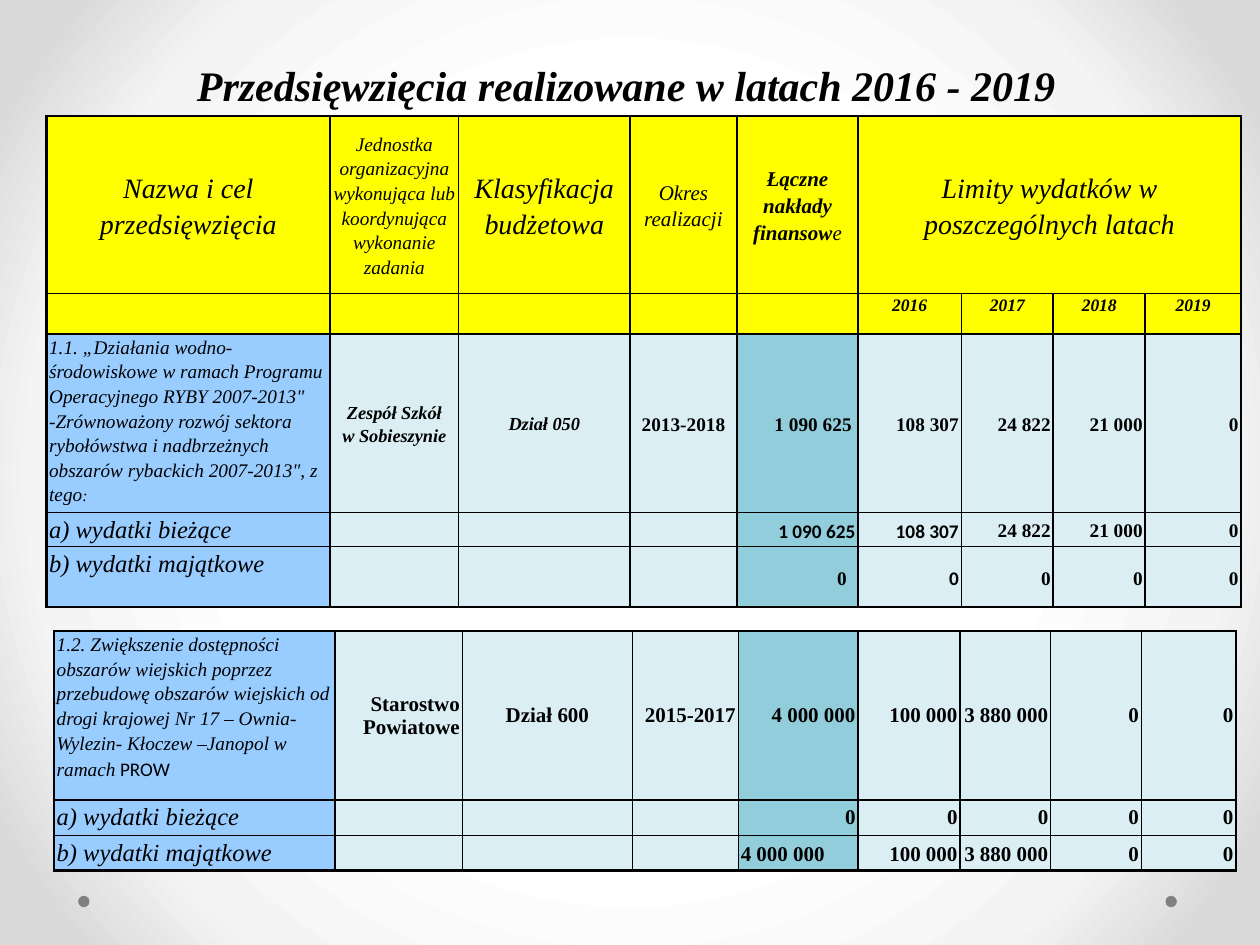
from pptx import Presentation
from pptx.dml.color import RGBColor as Rgb
from pptx.enum.shapes import MSO_SHAPE as Kind
from pptx.enum.text import MSO_ANCHOR as Anchor, MSO_AUTO_SIZE as Auto, PP_ALIGN as Align
from pptx.oxml import parse_xml as to_xml
from pptx.util import Emu, Pt

NS = 'xmlns:a="http://schemas.openxmlformats.org/drawingml/2006/main"'
SIDES = {"l": Align.LEFT, "c": Align.CENTER, "r": Align.RIGHT}
COLS = 100
YELLOW, BLUE, TEAL, PALE = "FFFF00", "99CCFF", "92CDDC", "DAEEF3"


def color(code):
    return Rgb.from_string(code)


def write(frame, text, side="l", gap=1.15, after=0, **look):
    parts = [(text, {})] if isinstance(text, str) else text
    para = frame.paragraphs[0]
    for words, extra in parts:
        for num, line in enumerate(words.split("\n")):
            if num:
                para = frame.add_paragraph()
            para.alignment = SIDES[side]
            para.line_spacing = gap
            para.space_after = Pt(after)
            style = {"size": 11, "bold": False, "slant": False,
                     "face": "Times New Roman", **look, **extra}
            if not line:
                para.font.size = Pt(style["size"])
                continue
            run = para.add_run()
            run.text = line
            font = run.font
            font.size, font.name = Pt(style["size"]), style["face"]
            font.bold, font.italic = style["bold"], style["slant"]
            font.color.rgb = color("000000")


class Deck:
    def __init__(self):
        self.file = Presentation()
        self.file.slide_width, self.file.slide_height = Emu(9144000), Emu(6858000)
        self.unit = self.file.slide_width / COLS
        self.slide = self.file.slides.add_slide(self.file.slide_layouts[5])

    def span(self, count):
        return Emu(round(count * self.unit))

    def glow(self, stops):
        self.slide.background.fill.solid()
        marks = "".join(
            f'<a:gs pos="{pos * 1000}"><a:srgbClr val="{code}"/></a:gs>' for pos, code in stops)
        grad = to_xml(
            f'<a:gradFill {NS} rotWithShape="1"><a:gsLst>{marks}</a:gsLst><a:path path="circle">'
            '<a:fillToRect l="50000" t="50000" r="50000" b="50000"/></a:path></a:gradFill>')
        old = self.slide.element.find(".//{*}bgPr/{*}solidFill")
        old.getparent().replace(old, grad)

    def title(self, text, left, top, width, height, **look):
        shape = self.slide.shapes.title
        shape.left, shape.top = self.span(left), self.span(top)
        shape.width, shape.height = self.span(width), self.span(height)
        frame = shape.text_frame
        frame.word_wrap, frame.auto_size = True, Auto.NONE
        frame.vertical_anchor = Anchor.TOP
        write(frame, text, **look)

    def dot(self, left, top, size):
        shape = self.slide.shapes.add_shape(
            Kind.OVAL, self.span(left), self.span(top), self.span(size), self.span(size))
        shape.shadow.inherit = False
        shape.fill.solid()
        shape.fill.fore_color.rgb = color("808080")
        shape.line.fill.background()

    def edge(self, cell, outer):
        props = cell._tc.get_or_add_tcPr()
        for num, side in enumerate("LRTB"):
            width = Pt(1.5 if side in outer else 1)
            props.insert(num, to_xml(
                f'<a:ln{side} {NS} w="{width}"><a:solidFill><a:srgbClr val="000000"/>'
                f'</a:solidFill></a:ln{side}>'))

    def cell(self, cell, text, fill, pad=0.2, mid=True, **look):
        cell.margin_left, cell.margin_right = self.span(0.2), self.span(pad)
        cell.margin_top = cell.margin_bottom = 0
        cell.vertical_anchor = Anchor.MIDDLE if mid else Anchor.TOP
        cell.fill.solid()
        cell.fill.fore_color.rgb = color(fill)
        write(cell.text_frame, text, **look)

    def table(self, left, top, cols, rows, data, merge=None):
        grid = self.slide.shapes.add_table(
            len(rows), len(cols), self.span(left), self.span(top),
            self.span(sum(cols)), self.span(sum(rows))).table
        grid.first_row = grid.horz_banding = False
        for col, width in zip(grid.columns, cols):
            col.width = self.span(width)
        for row, height in zip(grid.rows, rows):
            row.height = self.span(height)
        for r, line in enumerate(data):
            for c, spec in enumerate(line):
                cell = grid.cell(r, c)
                self.cell(cell, **spec)
                ends = {"L": c == 0, "R": c == len(cols) - 1 or merge == (r, c),
                        "T": r == 0, "B": r == len(rows) - 1}
                self.edge(cell, [side for side, hit in ends.items() if hit])
        if merge:
            r, c = merge
            grid.cell(r, c).merge(grid.cell(r, len(cols) - 1))


def head(items, **look):
    return [{"fill": YELLOW, "side": "c", "slant": True, **look, **item} for item in items]


def body(name, items, big=14, **look):
    first = {"text": name, "fill": BLUE, "mid": False, "slant": True, "size": big}
    fills = [PALE] * 3 + [TEAL] + [PALE] * 4
    rest = [{"fill": fill, "side": "r", "bold": True, **look,
             **(item if isinstance(item, dict) else {"text": item})}
            for fill, item in zip(fills, items)]
    return [first] + rest


def main():
    deck = Deck()
    deck.glow([(0, "FFFFFF"), (50, "FFFFFF"), (76, "F4F4F4"), (92, "DADADA"), (100, "DADADA")])
    for left in (6.2, 92.5):
        deck.dot(left, 71.1, 0.9)
    deck.title("Przedsięwzięcia realizowane w latach 2016 - 2019", 5.9, 3.6, 87.6, 5.7,
               side="c", after=10, size=24, bold=True, slant=True)

    blank = [""] * 3
    top = head([
        {"text": "Nazwa i cel przedsięwzięcia"},
        {"text": "Jednostka organizacyjna wykonująca lub koordynująca wykonanie zadania", "size": 11},
        {"text": "Klasyfikacja budżetowa"},
        {"text": "Okres realizacji", "size": 12},
        {"text": [("Łączne nakłady finansow", {"bold": True}), ("e", {})], "size": 12},
        {"text": "Limity wydatków w poszczególnych latach"},
        *[{"text": ""}] * 3], size=16)
    years = head([{"text": text} for text in [""] * 5 + ["2016", "2017", "2018", "2019"]],
                 size=10, bold=True, mid=False)
    water = [("1.1. „Działania wodno-środowiskowe w ramach Programu Operacyjnego RYBY 2007-2013\" "
              "-Zrównoważony rozwój sektora rybołówstwa i nadbrzeżnych obszarów rybackich "
              "2007-2013\", z tego", {}), (":", {"size": 9})]
    note = {"side": "c", "slant": True, "size": 10.5}
    plain = {"face": "Calibri"}
    deck.table(
        3.7, 9.2, [22.5, 10.2, 13.6, 8.5, 9.6, 8.2, 7.3, 7.3, 7.6], [14.1, 3.2, 14.2, 2.7, 4.8],
        [top, years,
         body(water, [{"text": "Zespół Szkół\nw Sobieszynie", **note},
                      {"text": "Dział 050", **note}, {"text": "2013-2018", "side": "c"},
                      {"text": "1 090 625", "pad": 0.5},
                      "108 307", "24 822", "21 000", "0"], big=11),
         body("a) wydatki bieżące", blank + [{"text": "1 090 625", **plain},
              {"text": "108 307", **plain}, "24 822", "21 000", "0"]),
         body("b) wydatki majątkowe", blank + [{"text": "0", "pad": 0.9},
              {"text": "0", **plain}, "0", "0", "0"])],
        merge=(0, 5))

    road = [("1.2. Zwiększenie dostępności obszarów wiejskich poprzez przebudowę obszarów "
             "wiejskich od drogi krajowej Nr 17 – Ownia- Wylezin- Kłoczew –Janopol w ramach", {}),
            (" PROW", {"face": "Calibri", "slant": False})]
    deck.table(
        4.3, 50.1, [22.3, 10.1, 13.5, 8.4, 9.5, 8.1, 7.2, 7.2, 7.5], [13.4, 2.8, 2.8],
        [body(road, ["Starostwo Powiatowe", {"text": "Dział 600", "side": "c"}, "2015-2017",
                     "4 000 000", "100 000", "3 880 000", "0", "0"], big=11, size=12, gap=1),
         body("a) wydatki bieżące", blank + ["0"] * 5, size=12, gap=1),
         body("b) wydatki majątkowe", blank + [{"text": "4 000 000", "side": "l"},
              "100 000", "3 880 000", "0", "0"], size=12)])
    deck.file.save("out.pptx")


if __name__ == "__main__":
    main()
